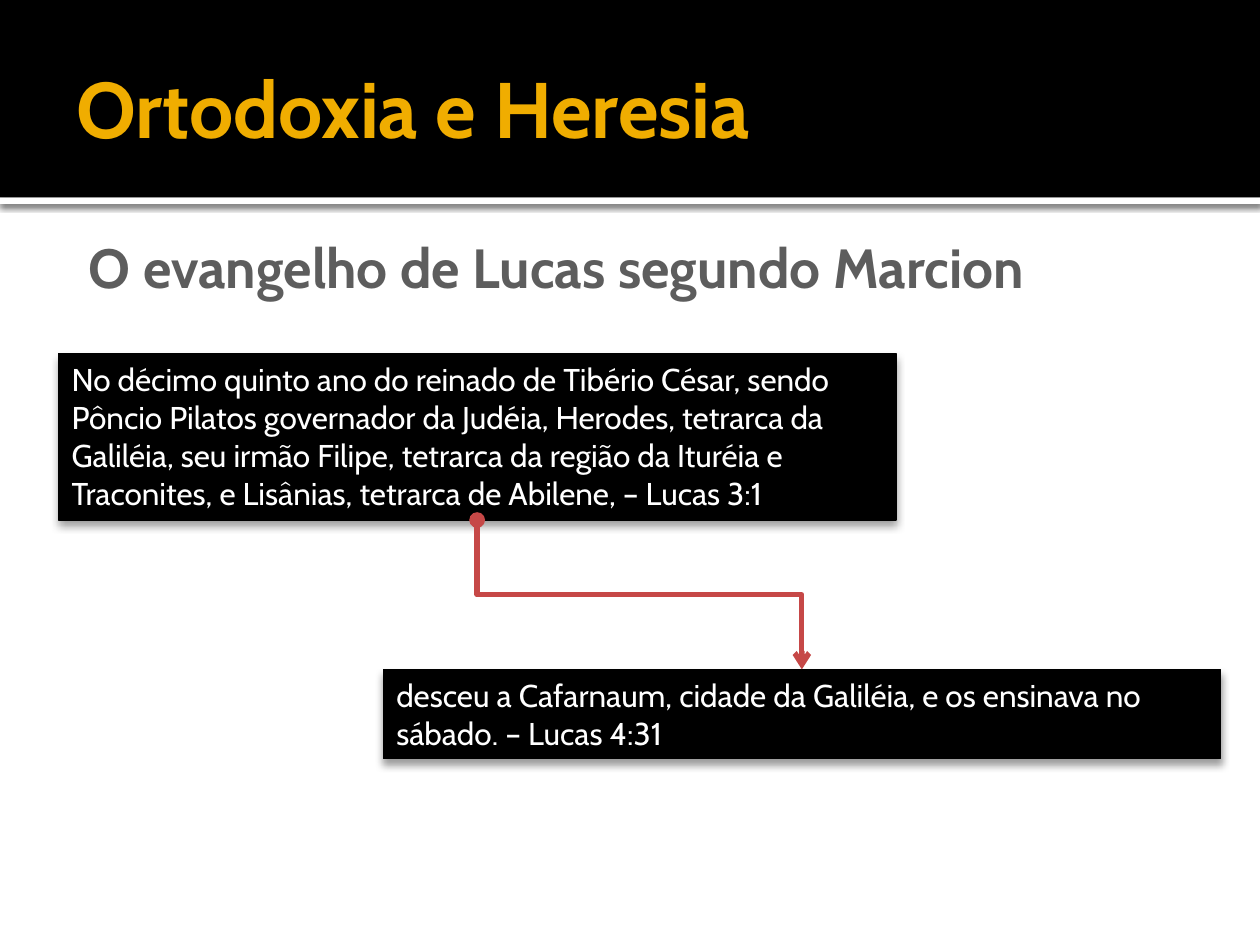
from dataclasses import dataclass

from lxml import etree
from pptx import Presentation
from pptx.dml.color import RGBColor
from pptx.enum.shapes import MSO_CONNECTOR as Connector, MSO_SHAPE as Shape
from pptx.enum.text import MSO_ANCHOR as Anchor, PP_ALIGN as Align
from pptx.oxml.ns import qn
from pptx.util import Pt


@dataclass(frozen=True)
class Theme:
    font: str = "Cabin"
    black: str = "000000"
    white: str = "FFFFFF"
    gold: str = "F0AD00"
    grey: str = "5D5D5D"
    red: str = "C64847"
    title_size: float = 30
    subtitle_size: float = 21
    verse_size: float = 12


THEME = Theme()


def color(value):
    return RGBColor.from_string(value)


def add_shadow(shape, opacity, blur, distance):
    """Cast a black shadow straight down; lengths are in points."""
    effects = etree.SubElement(shape._element.spPr, qn("a:effectLst"))
    shadow = etree.SubElement(
        effects, qn("a:outerShdw"), blurRad=str(Pt(blur)), dist=str(Pt(distance)),
        dir="5400000", algn="tl", rotWithShape="0")
    tint = etree.SubElement(shadow, qn("a:srgbClr"), val=THEME.black)
    etree.SubElement(tint, qn("a:alpha"), val=str(opacity * 1000))


def write(shape, text, size, ink, bold=False, align=Align.LEFT, anchor=Anchor.TOP):
    frame = shape.text_frame
    frame.word_wrap = True
    frame.vertical_anchor = anchor
    frame.margin_left = frame.margin_right = Pt(5)
    frame.margin_top = frame.margin_bottom = Pt(2.5)
    frame.text = text
    para = frame.paragraphs[0]
    para.alignment = align
    font = para.runs[0].font
    font.name, font.size, font.bold = THEME.font, Pt(size), bold
    font.color.rgb = color(ink)


def add_bar(page, left, top, width, height, fill):
    bar = page.shapes.add_shape(
        Shape.RECTANGLE, Pt(left), Pt(top), Pt(width), Pt(height))
    bar.fill.solid()
    bar.fill.fore_color.rgb = color(fill)
    bar.line.fill.background()
    return bar


def add_heading(page, left, top, width, height, text, size, ink, **layout):
    box = page.shapes.add_textbox(Pt(left), Pt(top), Pt(width), Pt(height))
    write(box, text, size, ink, bold=True, **layout)


def add_verse(page, left, top, height, text):
    box = add_bar(page, left, top, 319, height, THEME.black)
    box.line.color.rgb = color(THEME.black)
    box.line.width = Pt(0.5)
    add_shadow(box, 38, 3.1, 2)
    write(box, text, THEME.verse_size, THEME.white)
    return box


def add_drop_arrow(page, upper, lower):
    """Elbow arrow from the bottom of upper, down and across to the top of lower."""
    start_x, start_y = upper.left + upper.width // 2, upper.top + upper.height
    end_x, end_y = lower.left + lower.width // 2, lower.top
    across, down = end_x - start_x, end_y - start_y
    arrow = page.shapes.add_connector(Connector.ELBOW, 0, 0, 0, 0)
    # The preset runs sideways first, so it is mirrored and turned by 270 degrees.
    arrow.left = (start_x + end_x - down) // 2
    arrow.top = (start_y + end_y - across) // 2
    arrow.width, arrow.height = down, across
    properties = arrow._element.spPr
    frame = properties.find(qn("a:xfrm"))
    frame.set("rot", str(270 * 60000))
    frame.set("flipH", "1")
    arrow.line.color.rgb = color(THEME.red)
    arrow.line.width = Pt(2)
    line = properties.find(qn("a:ln"))
    etree.SubElement(line, qn("a:headEnd"), type="oval")
    etree.SubElement(line, qn("a:tailEnd"), type="arrow")
    etree.SubElement(properties, qn("a:effectLst"))


def main():
    deck = Presentation()
    deck.slide_width, deck.slide_height = Pt(480), Pt(360)
    page = deck.slides.add_slide(deck.slide_layouts[6])

    rule = add_bar(page, 0, 75.3, 480, 2.4, THEME.white)
    add_shadow(rule, 60, 2.5, 0.8)
    band = add_bar(page, 0, 0, 480, 75.3, THEME.black)
    band.shadow.inherit = False
    add_heading(page, 24, 8, 432, 65.5, "Ortodoxia e Heresia",
                THEME.title_size, THEME.gold, anchor=Anchor.MIDDLE)

    lower = add_verse(
        page, 146, 255, 34,
        "desceu a Cafarnaum, cidade da Galiléia, e os ensinava no sábado. "
        "– Lucas 4:31")
    add_heading(page, 15, 86.5, 394, 30, "O evangelho de Lucas segundo Marcion",
                THEME.subtitle_size, THEME.grey, align=Align.CENTER)
    upper = add_verse(
        page, 22.3, 134.8, 63.3,
        "No décimo quinto ano do reinado de Tibério César, sendo Pôncio Pilatos "
        "governador da Judéia, Herodes, tetrarca da Galiléia, seu irmão Filipe, "
        "tetrarca da região da Ituréia e Traconites, e Lisânias, tetrarca de "
        "Abilene, – Lucas 3:1")
    add_drop_arrow(page, upper, lower)
    deck.save("out.pptx")


if __name__ == "__main__":
    main()
